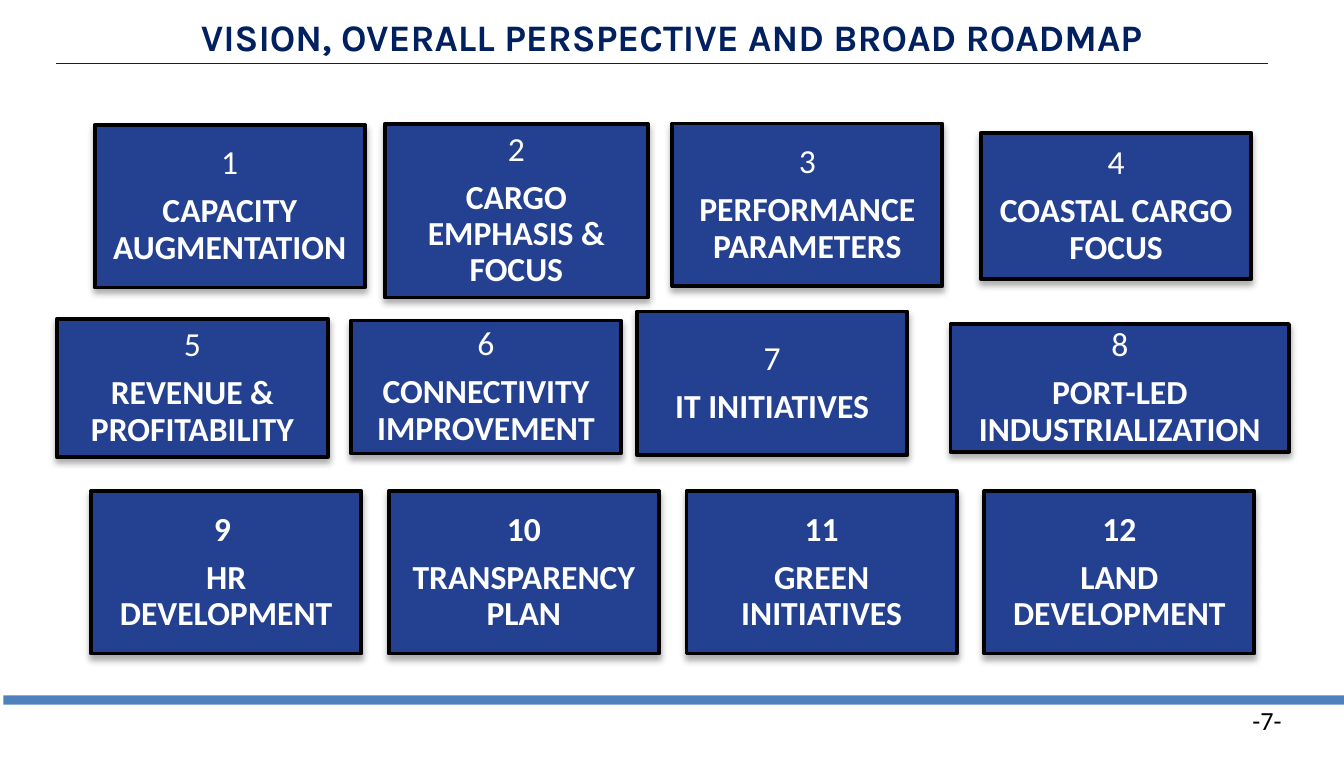
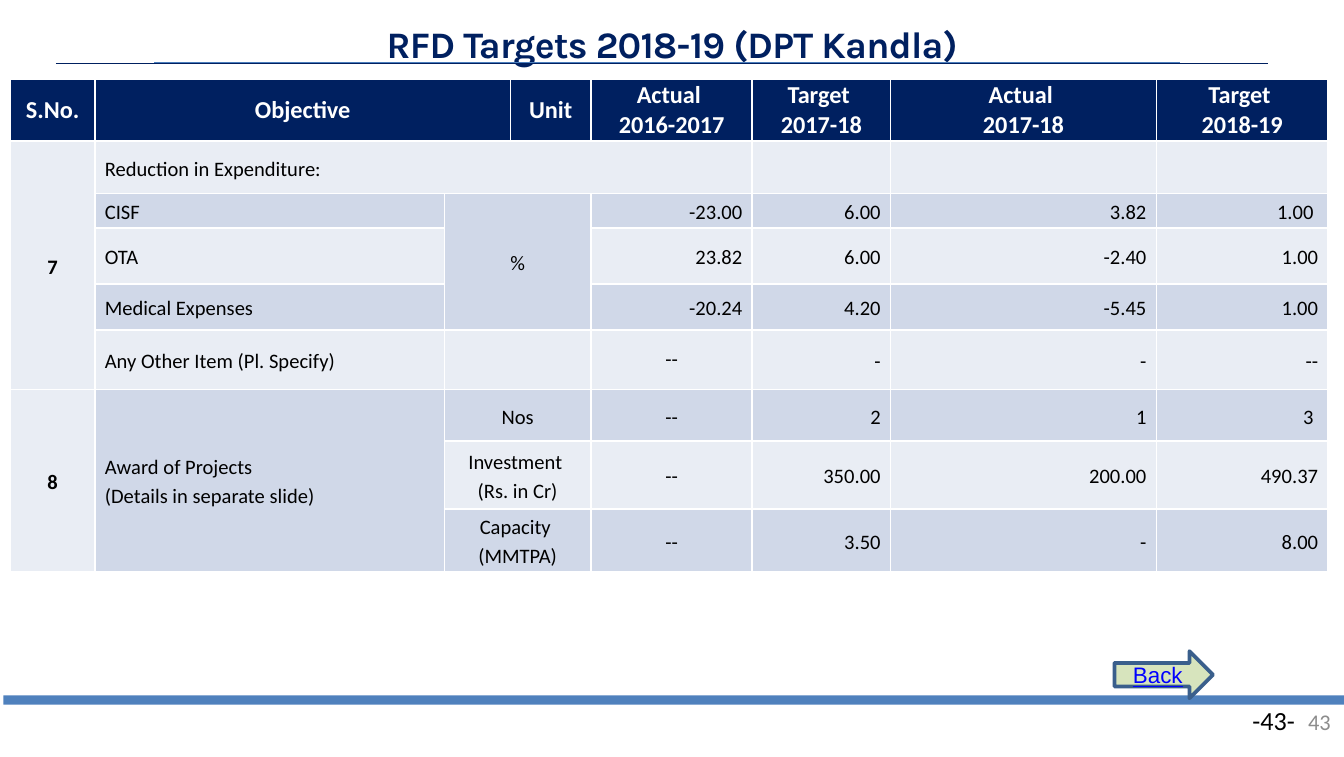
from dataclasses import dataclass

from lxml import etree
from pptx import Presentation
from pptx import util as u
from pptx.dml import color
from pptx.enum import shapes, text
from pptx.oxml import ns

Pt = u.Pt
LEFT, CENTER, RIGHT = text.PP_ALIGN.LEFT, text.PP_ALIGN.CENTER, text.PP_ALIGN.RIGHT
TOP, MIDDLE = text.MSO_ANCHOR.TOP, text.MSO_ANCHOR.MIDDLE


@dataclass(frozen=True)
class Theme:
    navy: str = "002060"
    card: str = "234091"
    bar: str = "4F81BD"
    rule: str = "4B7EBC"
    pale: str = "E9EDF4"
    mid: str = "D0D8E8"
    arrow: str = "D7E4BD"
    arrow_line: str = "3A5F8C"
    link: str = "0000FF"
    grey: str = "8C8C8C"
    black: str = "000000"
    white: str = "FFFFFF"
    title_font: str = "Karla"
    body_font: str = "Calibri"
    button_font: str = "Arial"
    title_size: float = 20
    card_size: float = 18
    page_size: float = 14
    head_size: float = 13
    small_size: float = 12
    cell_size: float = 11


@dataclass(frozen=True)
class Box:
    x: float
    y: float
    w: float
    h: float

    def inner(self, dx, dy, w, h):
        return Box(self.x + dx, self.y + dy, w, h)

    def pts(self):
        return Pt(self.x), Pt(self.y), Pt(self.w), Pt(self.h)


T = Theme()
SLIDE = Box(0, 0, 720, 405.36)


# Shared helpers
def rgb(value):
    return color.RGBColor.from_string(value)


def sub(parent, tag, **attrs):
    return etree.SubElement(parent, ns.qn(tag), {k: str(v) for k, v in attrs.items()})


def add_run(p, words, size, ink, font=T.body_font, bold=False):
    r = p.add_run()
    r.text = words
    r.font.name, r.font.size, r.font.bold = font, Pt(size), bold
    r.font.color.rgb = rgb(ink)
    return r


def set_frame(tf, dx, dy, anchor=TOP, wrap=True):
    tf.word_wrap, tf.vertical_anchor = wrap, anchor
    tf.margin_left = tf.margin_right = Pt(dx)
    tf.margin_top = tf.margin_bottom = Pt(dy)


def add_block(s, box, kind, fill, line=None):
    sp = s.shapes.add_shape(kind, *box.pts())
    sp.shadow.inherit = False
    sp.fill.solid()
    sp.fill.fore_color.rgb = rgb(fill)
    if line:
        sp.line.color.rgb, sp.line.width = rgb(line), Pt(2)
    else:
        sp.line.fill.background()
    return sp


def add_label(s, box, words, size, ink, align, anchor=TOP, wrap=True):
    tf = s.shapes.add_textbox(*box.pts()).text_frame
    set_frame(tf, 7.2, 3.6, anchor, wrap)
    tf.paragraphs[0].alignment = align
    add_run(tf.paragraphs[0], words, size, ink)


def add_rule(s, x1, x2, y, ink):
    c = s.shapes.add_connector(shapes.MSO_CONNECTOR.STRAIGHT, Pt(x1), Pt(y), Pt(x2), Pt(y))
    c.line.color.rgb, c.line.width = rgb(ink), Pt(0.75)
    sub(c._element.spPr, "a:effectLst")


# Regions common to the slides
def add_base(s, box, page):
    add_label(s, box.inner(663.8, 373.7, 39.6, 24.5), f"-{page}-",
              T.page_size, T.black, LEFT, wrap=False)
    add_block(s, box.inner(1.8, 372.4, 718.2, 4.9), shapes.MSO_SHAPE.RECTANGLE, T.bar)
    add_rule(s, box.x + 30, box.x + 679.2, box.y + 34, T.navy)


def add_title(s, box, words, line_spacing=1.0, tracking=0):
    tf = s.shapes.add_textbox(*box.pts()).text_frame
    set_frame(tf, 6.5, 3)
    p = tf.paragraphs[0]
    p.alignment, p.line_spacing = CENTER, line_spacing
    r = add_run(p, words, T.title_size, T.navy, T.title_font, True)
    if tracking:
        r.font._element.set("spc", str(round(tracking * 100)))


# Roadmap cards: offset and size within the region, then number and label
CARDS = [
    (20.5, 0.6, 144.7, 87.1, "1", "CAPACITY AUGMENTATION"),
    (175.9, 0.2, 141.1, 92.9, "2", "CARGO EMPHASIS & FOCUS"),
    (329.9, 0, 144.7, 87.1, "3", "PERFORMANCE PARAMETERS"),
    (495.4, 4.9, 144.7, 78.5, "4", "COASTAL CARGO FOCUS"),
    (0.2, 104.5, 145.4, 74.2, "5", "REVENUE & PROFITABILITY"),
    (157.8, 105.4, 144.7, 71.3, "6", "CONNECTIVITY IMPROVEMENT"),
    (311.1, 100.6, 144.7, 77, "7", "IT INITIATIVES"),
    (479, 107.3, 181.4, 68.4, "8", "PORT-LED INDUSTRIALIZATION"),
]
LAST_ROW = [("9 ", "HR DEVELOPMENT"), ("10", "TRANSPARENCY PLAN"),
            ("11", "GREEN INITIATIVES"), ("12", "LAND DEVELOPMENT")]
CARDS += [(18.6 + 159.5 * i, 196.7, 144.7, 87.1, *words) for i, words in enumerate(LAST_ROW)]


def add_card(s, box, number, label):
    sp = add_block(s, box, shapes.MSO_SHAPE.RECTANGLE, T.card, T.black)
    effects = sp._element.spPr.find(ns.qn("a:effectLst"))
    shadow = sub(effects, "a:outerShdw", blurRad=Pt(3.5), dist=Pt(2.2),
                 dir=5400000, rotWithShape=0)
    sub(sub(shadow, "a:srgbClr", val=T.black), "a:alpha", val=32000)
    tf = sp.text_frame
    set_frame(tf, 5, 5, MIDDLE)
    paragraphs = [tf.paragraphs[0], tf.add_paragraph()]
    for p, words, bold in zip(paragraphs, (number, label), (int(number) > 8, True)):
        p.alignment, p.line_spacing = CENTER, 0.9
        add_run(p, words, T.card_size, T.white, bold=bold)
    paragraphs[0].space_after = Pt(6.3)


def add_roadmap(s, box):
    for dx, dy, w, h, number, label in CARDS:
        add_card(s, box.inner(dx, dy, w, h), number, label)


# Targets table: "\n" starts a paragraph, "\v" a line
COLUMNS = [45.4, 187.2, 35.3, 43.2, 86.4, 74.1, 142.4, 92]
HEIGHTS = [33.1, 28, 18.4, 30.2, 24.5, 31.9, 27.5, 36.6, 33.4]
ROWS = [
    ["S.No.", "Objective", "", "Unit", "Actual \n2016-2017", "Target \n2017-18",
     "Actual \n2017-18", "Target \n2018-19"],
    ["7", "Reduction in Expenditure:", "", "", "", "", "", ""],
    ["", "CISF", "%", "", "-23.00", "6.00", "3.82", "1.00 "],
    ["", "OTA", "", "", "23.82", "6.00", "-2.40", "1.00"],
    ["", "Medical Expenses", "", "", "-20.24", "4.20", "-5.45", " 1.00"],
    ["", "Any Other Item (Pl. Specify)", "", "", "--", "-", "-", " --"],
    ["8", "Award of Projects\n(Details in separate slide)", "Nos", "", "--", "2", "1", "3 "],
    ["", "", "Investment \v(Rs. in Cr)", "", "--", "350.00", "200.00", "490.37"],
    ["", "", "Capacity \v(MMTPA)", "", "--", "3.50", "-", "8.00"],
]
# First and last cell of each merged block, as (row, column)
MERGES = [((0, 1), (0, 2)), ((1, 0), (5, 0)), ((1, 1), (1, 4)), ((2, 2), (4, 3)),
          ((5, 2), (5, 3)), ((6, 0), (8, 0)), ((6, 1), (8, 1)),
          ((6, 2), (6, 3)), ((7, 2), (7, 3)), ((8, 2), (8, 3))]
SINGLE_SPACED = (5, 4)


def cell_align(row, col, words):
    if row == 0 or col in (0, 2, 3) or (col == 4 and words == "--"):
        return CENTER
    return LEFT if col == 1 else RIGHT


def style_cell(cell, row, col):
    cell.vertical_anchor = MIDDLE
    cell.margin_left = cell.margin_right = Pt(5.3 if row else 0.7)
    cell.margin_top = cell.margin_bottom = 0
    tc_pr = cell._tc.get_or_add_tcPr()
    for side in ("a:lnL", "a:lnR", "a:lnT", "a:lnB"):
        ln = sub(tc_pr, side, w=Pt(1))
        sub(sub(ln, "a:solidFill"), "a:srgbClr", val=T.white)
    cell.fill.solid()
    band = T.pale if col == 0 or row % 2 else T.mid
    cell.fill.fore_color.rgb = rgb(band if row else T.navy)


def fill_cell(cell, row, col, words):
    size, ink = (T.cell_size, T.black) if row else (T.head_size, T.white)
    tf = cell.text_frame
    if not words:
        sub(tf.paragraphs[0]._p, "a:endParaRPr", sz=size * 100)
        return
    for i, paragraph in enumerate(words.split("\n")):
        p = tf.add_paragraph() if i else tf.paragraphs[0]
        p.alignment = cell_align(row, col, words)
        p.line_spacing = 1.0 if row == 0 or (row, col) == SINGLE_SPACED else 1.15
        for j, line in enumerate(paragraph.split("\v")):
            if j:
                p.add_line_break()
                sub(p._p[-1], "a:rPr", sz=size * 100)
            add_run(p, line, size, ink, bold=row == 0 or col == 0)


def add_targets(s, box):
    table = s.shapes.add_table(len(ROWS), len(COLUMNS), *box.pts()).table
    table.horz_banding = False
    for column, width in zip(table.columns, COLUMNS):
        column.width = Pt(width)
    for row, height in zip(table.rows, HEIGHTS):
        row.height = Pt(height)
    for i, row in enumerate(ROWS):
        for j, words in enumerate(row):
            style_cell(table.cell(i, j), i, j)
            fill_cell(table.cell(i, j), i, j, words)
    for first, last in MERGES:
        table.cell(*first).merge(table.cell(*last))


def add_back_arrow(s, box):
    sp = add_block(s, box, shapes.MSO_SHAPE.RIGHT_ARROW, T.arrow, T.arrow_line)
    tf = sp.text_frame
    set_frame(tf, 6.5, 3, MIDDLE)
    tf.paragraphs[0].alignment = CENTER
    r = add_run(tf.paragraphs[0], "Back", T.small_size, T.link, T.button_font)
    r.font.underline = True


# Slides
def roadmap_slide(s, box):
    add_base(s, box, 7)
    add_title(s, box.inner(28, 4.7, 664, 40.3), "VISION, OVERALL PERSPECTIVE AND BROAD ROADMAP")
    add_roadmap(s, box.inner(30.2, 66.2, 660, 284))


def targets_slide(s, box):
    add_base(s, box, 43)
    add_label(s, box.inner(552.2, 375.8, 167.8, 21.6), "43",
              T.small_size, T.grey, RIGHT, MIDDLE)
    add_targets(s, box.inner(5.5, 42.5, sum(COLUMNS), sum(HEIGHTS)))
    add_back_arrow(s, box.inner(597, 348.7, 52.8, 25.2))
    add_title(s, box.inner(0, 11.1, 720, 21.6), "RFD Targets 2018-19 (DPT Kandla)", 0.9, -0.4)
    add_rule(s, box.x + 82.6, box.x + 632.2, box.y + 33.6, T.rule)


def main():
    prs = Presentation()
    prs.slide_width, prs.slide_height = Pt(SLIDE.w), Pt(SLIDE.h)
    for build in (roadmap_slide, targets_slide):
        build(prs.slides.add_slide(prs.slide_layouts[6]), SLIDE)
    prs.save("out.pptx")


if __name__ == "__main__":
    main()
